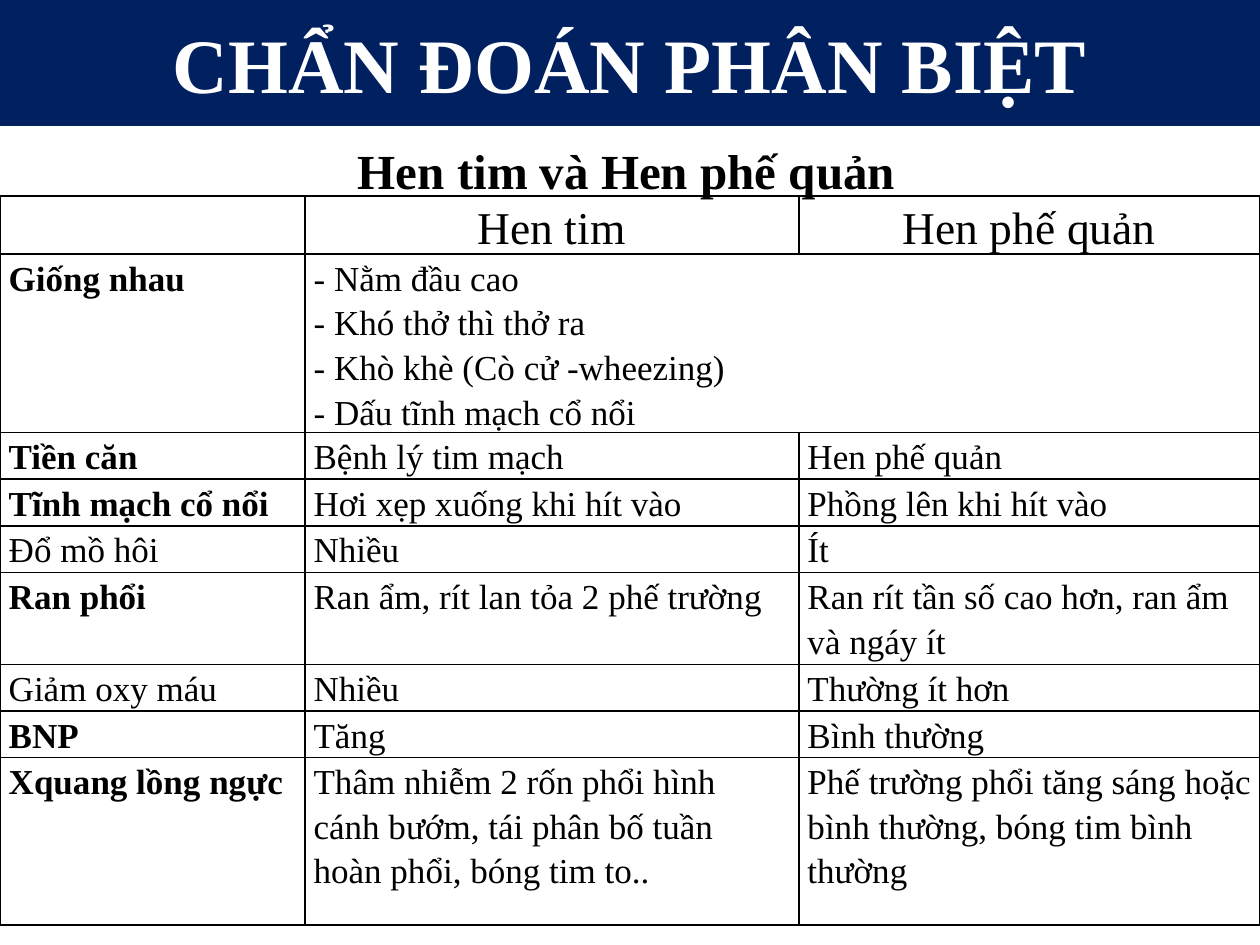
from dataclasses import dataclass

from lxml.etree import SubElement
from pptx import Presentation
from pptx.dml.color import RGBColor
from pptx.enum.text import MSO_ANCHOR, MSO_AUTO_SIZE, PP_ALIGN
from pptx.oxml.ns import qn
from pptx.util import Pt


@dataclass(frozen=True)
class Theme:
    font: str = "Times New Roman"
    navy: str = "002060"
    white: str = "FFFFFF"
    black: str = "000000"
    title: int = 44
    subtitle: int = 28
    header: int = 26
    body: int = 20
    border: int = 1


COLUMNS = [174.24, 282.24, 263.52]
HEADER = ["", "Hen tim", "Hen phế quản"]
ROWS = [
    (95.76, True, ["Giống nhau", "- Nằm đầu cao\n- Khó thở thì thở ra\n"
                   "- Khò khè (Cò cử -wheezing)\n- Dấu tĩnh mạch cổ nổi"]),
    (26.64, True, ["Tiền căn", "Bệnh lý tim mạch", "Hen phế quản"]),
    (26.64, True, ["Tĩnh mạch cổ nổi", "Hơi xẹp xuống khi hít vào", "Phồng lên khi hít vào"]),
    (26.64, False, ["Đổ mồ hôi", "Nhiều", "Ít"]),
    (52.56, True, ["Ran phổi", "Ran ẩm, rít lan tỏa 2 phế trường",
                   "Ran rít tần số cao hơn, ran ẩm và ngáy ít"]),
    (26.64, False, ["Giảm oxy máu", "Nhiều", "Thường ít hơn"]),
    (26.64, True, ["BNP", "Tăng", "Bình thường"]),
    (95.76, True, ["Xquang lồng ngực",
                   "Thâm nhiễm 2 rốn phổi hình cánh bướm, tái phân bố tuần hoàn phổi, bóng tim to..",
                   "Phế trường phổi tăng sáng hoặc bình thường, bóng tim bình thường"]),
]


def set_all(target, values):
    for name, value in values.items():
        setattr(target, name, value)


class SlideBuilder:
    def __init__(self, s, theme):
        self.s = s
        self.theme = theme

    def paragraph(self, tf, text, size, color, bold=False, align=PP_ALIGN.LEFT, spacing=1.15, after=10):
        p = tf.paragraphs[0]
        p.text = text
        set_all(p, {"alignment": align, "line_spacing": spacing,
                    "space_before": Pt(0), "space_after": Pt(after)})
        for r in p.runs:
            set_all(r.font, {"name": self.theme.font, "size": Pt(size), "bold": bold})
            r.font.color.rgb = RGBColor.from_string(color)

    def title(self, text, left, top, width, height):
        sp = self.s.shapes.title
        set_all(sp, {"left": Pt(left), "top": Pt(top), "width": Pt(width), "height": Pt(height)})
        sp.fill.solid()
        sp.fill.fore_color.rgb = RGBColor.from_string(self.theme.navy)
        set_all(sp.text_frame, {"auto_size": MSO_AUTO_SIZE.NONE, "word_wrap": True,
                                "vertical_anchor": MSO_ANCHOR.MIDDLE})
        self.paragraph(sp.text_frame, text, self.theme.title, self.theme.white, True,
                       PP_ALIGN.CENTER, 1.0, 0)

    def subtitle(self, text, left, top, width, height):
        sp = self.s.shapes.add_textbox(Pt(left), Pt(top), Pt(width), Pt(height))
        set_all(sp.text_frame, {"word_wrap": True, "auto_size": MSO_AUTO_SIZE.SHAPE_TO_FIT_TEXT})
        self.paragraph(sp.text_frame, text, self.theme.subtitle, self.theme.black, True,
                       PP_ALIGN.CENTER)

    def border(self, cell):
        tcPr = cell._tc.get_or_add_tcPr()
        for side in ("L", "R", "T", "B"):
            ln = SubElement(tcPr, qn(f"a:ln{side}"), w=str(Pt(self.theme.border)))
            fill = SubElement(ln, qn("a:solidFill"))
            SubElement(fill, qn("a:srgbClr"), val=self.theme.black)

    def table(self, left, top, columns, header, header_height, rows):
        heights = [header_height] + [height for height, _, _ in rows]
        frame = self.s.shapes.add_table(len(heights), len(columns), Pt(left), Pt(top),
                                        Pt(sum(columns)), Pt(sum(heights)))
        table = frame.table
        set_all(table, {"first_row": False, "horz_banding": False})
        for column, width in zip(table.columns, columns):
            column.width = Pt(width)
        for row, height in zip(table.rows, heights):
            row.height = Pt(height)
        for cell in table.iter_cells():
            set_all(cell, {"margin_left": Pt(5), "margin_right": Pt(5), "margin_top": 0,
                           "margin_bottom": 0, "vertical_anchor": MSO_ANCHOR.TOP})
            self.border(cell)
            cell.fill.background()
        for j, text in enumerate(header):
            self.paragraph(table.cell(0, j).text_frame, text, self.theme.header,
                           self.theme.black, align=PP_ALIGN.CENTER)
        for i, (_, bold, texts) in enumerate(rows, 1):
            if len(texts) < len(columns):
                table.cell(i, len(texts) - 1).merge(table.cell(i, len(columns) - 1))
            for j, text in enumerate(texts):
                self.paragraph(table.cell(i, j).text_frame, text, self.theme.body,
                               self.theme.black, bold and j == 0)


def main():
    prs = Presentation()
    set_all(prs, {"slide_width": Pt(720), "slide_height": Pt(540)})
    builder = SlideBuilder(prs.slides.add_slide(prs.slide_layouts[5]), Theme())
    builder.title("CHẨN ĐOÁN PHÂN BIỆT", 0, 0, 720, 72)
    builder.table(0, 112, COLUMNS, HEADER, 29.52, ROWS)
    builder.subtitle("Hen tim và Hen phế quản", 116, 72, 484, 46)
    prs.save("out.pptx")


if __name__ == "__main__":
    main()
